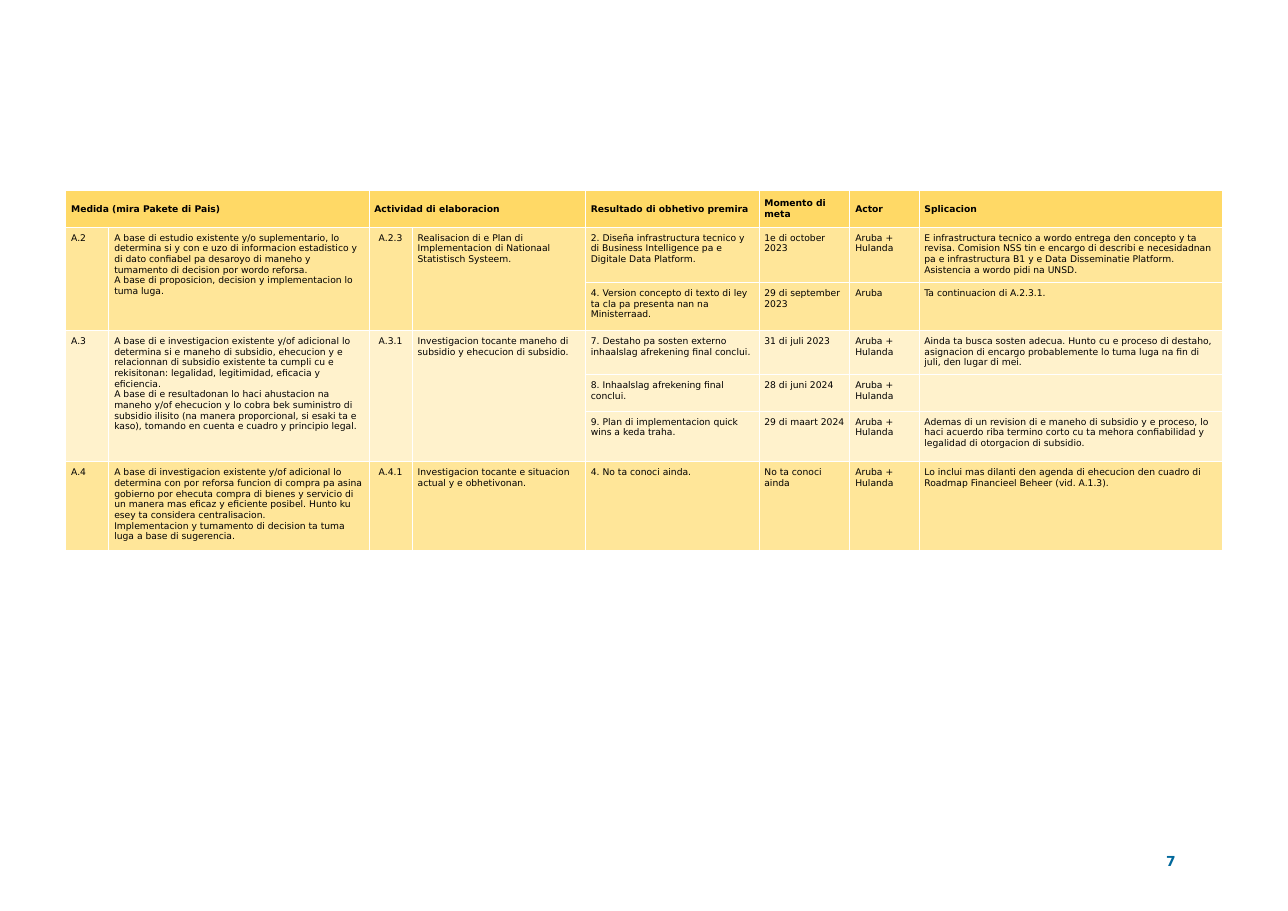
from dataclasses import dataclass

from lxml import etree
from pptx import Presentation
from pptx.dml.color import RGBColor
from pptx.enum import text as text_enum
from pptx.oxml import ns
from pptx.util import Pt

FONT = "DejaVu Sans"
BLACK, WHITE, BLUE = "000000", "FFFFFF", "01689B"
HEADER_FILL, DARK_FILL, LIGHT_FILL = "FFD966", "FFE699", "FFF2CC"
COLUMN_WIDTHS = [28.2, 170, 28.3, 113.2, 113.4, 59.4, 45.2, 198.6]
ROW_HEIGHTS = [23.8, 36.1, 31.4, 28.8, 24.1, 33, 57.6]
CELL_MARGIN = 3.6
CODE_COLUMN = 2


@dataclass
class Result:
    goal: str
    moment: str
    actor: str
    note: str


@dataclass
class Measure:
    code: str
    description: str
    activity_code: str
    activity: str
    fill: str
    results: list[Result]


HEADINGS = {
    0: "Medida (mira Pakete di Pais)",
    2: "Actividad di elaboracion",
    4: "Resultado di obhetivo premira",
    5: "Momento di meta",
    6: "Actor",
    7: "Splicacion",
}

BOTH = "Aruba + Hulanda"
MEASURES = [
    Measure(
        "A.2",
        "A base di estudio existente y/o suplementario, lo determina si y con e uzo di "
        "informacion estadistico y di dato confiabel pa desaroyo di maneho y tumamento di "
        "decision por wordo reforsa.\n"
        "A base di proposicion, decision y implementacion lo tuma luga.",
        "A.2.3",
        "Realisacion di e Plan di Implementacion di Nationaal Statistisch Systeem.",
        DARK_FILL,
        [
            Result("2. Diseña infrastructura tecnico y di Business Intelligence pa e "
                   "Digitale Data Platform.", "1e di october 2023", BOTH,
                   "E infrastructura tecnico a wordo entrega den concepto y ta revisa. "
                   "Comision NSS tin e encargo di describi e necesidadnan pa e infrastructura "
                   "B1 y e Data Disseminatie Platform. Asistencia a wordo pidi na UNSD."),
            Result("4. Version concepto di texto di ley ta cla pa presenta nan na "
                   "Ministerraad.", "29 di september 2023", "Aruba",
                   "Ta continuacion di A.2.3.1."),
        ],
    ),
    Measure(
        "A.3",
        "A base di e investigacion existente y/of adicional lo determina si e maneho di "
        "subsidio, ehecucion y e relacionnan di subsidio existente ta cumpli cu e "
        "rekisitonan: legalidad, legitimidad, eficacia y eficiencia.\n"
        "A base di e resultadonan lo haci ahustacion na maneho y/of ehecucion y lo cobra "
        "bek suministro di subsidio ilisito (na manera proporcional, si esaki ta e kaso), "
        "tomando en cuenta e cuadro y principio legal.",
        "A.3.1",
        "Investigacion tocante maneho di subsidio y ehecucion di subsidio.",
        LIGHT_FILL,
        [
            Result("7. Destaho pa sosten externo inhaalslag afrekening final conclui.",
                   "31 di juli 2023", BOTH,
                   "Ainda ta busca sosten adecua. Hunto cu e proceso di destaho, asignacion "
                   "di encargo probablemente lo tuma luga na fin di juli, den lugar di mei."),
            Result("8. Inhaalslag afrekening final conclui.", "28 di juni 2024", BOTH, ""),
            Result("9. Plan di implementacion quick wins a keda traha.",
                   "29 di maart 2024", BOTH,
                   "Ademas di un revision di e maneho di subsidio y e proceso, lo haci acuerdo "
                   "riba termino corto cu ta mehora confiabilidad y legalidad di otorgacion di "
                   "subsidio."),
        ],
    ),
    Measure(
        "A.4",
        "A base di investigacion existente y/of adicional lo determina con por reforsa "
        "funcion di compra pa asina gobierno por ehecuta compra di bienes y servicio di un "
        "manera mas eficaz y eficiente posibel. Hunto ku esey ta considera centralisacion.\n"
        "Implementacion y tumamento di decision ta tuma luga a base di sugerencia.",
        "A.4.1",
        "Investigacion tocante e situacion actual y e obhetivonan.",
        DARK_FILL,
        [
            Result("4. No ta conoci ainda.", "No ta conoci ainda", BOTH,
                   "Lo inclui mas dilanti den agenda di ehecucion den cuadro di Roadmap "
                   "Financieel Beheer (vid. A.1.3)."),
        ],
    ),
]


def color(value: str) -> RGBColor:
    return RGBColor.from_string(value)


def write(frame, content: str, *, size: float = 6, bold: bool = False,
          fill: str = BLACK, align=text_enum.PP_ALIGN.LEFT) -> None:
    frame.text = content
    for paragraph in frame.paragraphs:
        paragraph.alignment = align
        for run in paragraph.runs:
            run.font.name = FONT
            run.font.size = Pt(size)
            run.font.bold = bold
            run.font.color.rgb = color(fill)
        # Keep empty cells from growing to the default text size
        end = paragraph._p.get_or_add_endParaRPr()
        end.set("sz", str(int(size * 100)))


def add_borders(cell) -> None:
    properties = cell._tc.get_or_add_tcPr()
    for index, side in enumerate(("lnL", "lnR", "lnT", "lnB")):
        line = etree.Element(ns.qn(f"a:{side}"), w=str(Pt(0.5)))
        solid = etree.SubElement(line, ns.qn("a:solidFill"))
        etree.SubElement(solid, ns.qn("a:srgbClr"), val=WHITE)
        properties.insert(index, line)


def fill_cell(cell, content: str, background: str, **text_format) -> None:
    cell.margin_left = cell.margin_right = Pt(CELL_MARGIN)
    cell.margin_top = cell.margin_bottom = Pt(CELL_MARGIN)
    cell.fill.solid()
    cell.fill.fore_color.rgb = color(background)
    write(cell.text_frame, content, **text_format)
    add_borders(cell)


def add_measure(table, first_row: int, measure: Measure) -> int:
    """Fill the rows of one measure and return the next free row."""
    shared = [measure.code, measure.description, measure.activity_code, measure.activity]
    for offset, result in enumerate(measure.results):
        left = shared if offset == 0 else [""] * len(shared)
        values = left + [result.goal, result.moment, result.actor, result.note]
        for column, value in enumerate(values):
            centred = column == CODE_COLUMN
            align = text_enum.PP_ALIGN.CENTER if centred else text_enum.PP_ALIGN.LEFT
            fill_cell(table.cell(first_row + offset, column), value, measure.fill, align=align)
    next_row = first_row + len(measure.results)
    if len(measure.results) > 1:
        for column in range(len(shared)):
            table.cell(first_row, column).merge(table.cell(next_row - 1, column))
    return next_row


def add_plan_table(slide) -> None:
    frame = slide.shapes.add_table(
        len(ROW_HEIGHTS), len(COLUMN_WIDTHS), Pt(42.9), Pt(124.7),
        Pt(sum(COLUMN_WIDTHS)), Pt(sum(ROW_HEIGHTS)))
    table = frame.table
    table.first_row = table.horz_banding = False
    for column, width in zip(table.columns, COLUMN_WIDTHS):
        column.width = Pt(width)
    for row, height in zip(table.rows, ROW_HEIGHTS):
        row.height = Pt(height)

    # Header row
    for column in range(len(COLUMN_WIDTHS)):
        cell = table.cell(0, column)
        fill_cell(cell, HEADINGS.get(column, ""), HEADER_FILL, bold=True)
        cell.vertical_anchor = text_enum.MSO_ANCHOR.MIDDLE
    for column in (0, 2):
        table.cell(0, column).merge(table.cell(0, column + 1))

    # Measures
    row = 1
    for measure in MEASURES:
        row = add_measure(table, row, measure)


def add_page_number(slide) -> None:
    box = slide.shapes.add_textbox(Pt(759.6), Pt(557.3), Pt(15.1), Pt(10.8))
    frame = box.text_frame
    frame.margin_left = Pt(2.4)
    frame.margin_right = frame.margin_top = frame.margin_bottom = 0
    frame.word_wrap = True
    write(frame, "7", size=9, bold=True, fill=BLUE)


def main() -> None:
    presentation = Presentation()
    presentation.slide_width, presentation.slide_height = Pt(841.68), Pt(595.44)
    slide = presentation.slides.add_slide(presentation.slide_layouts[6])
    add_plan_table(slide)
    add_page_number(slide)
    presentation.save("out.pptx")


if __name__ == "__main__":
    main()
